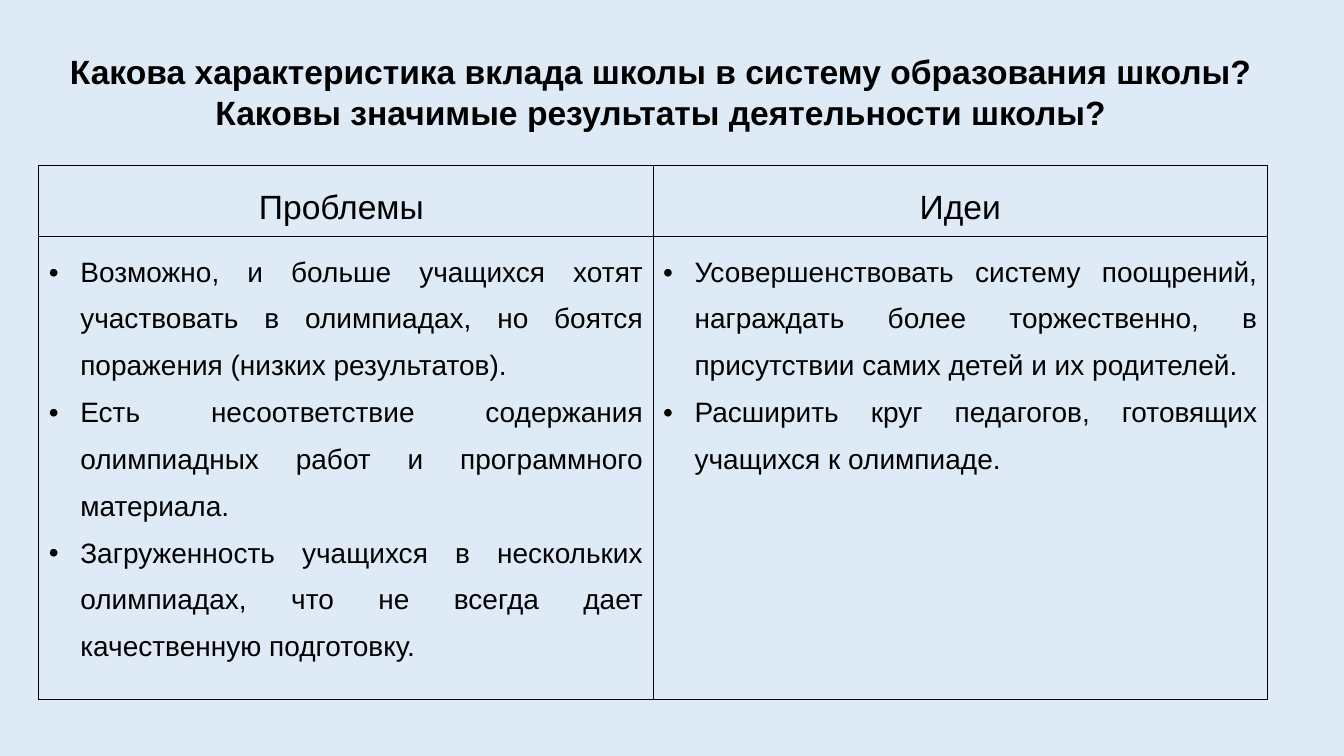
"""Build a slide with a title and a table of problems and ideas."""
import pptx
import pptx.util
import pptx.dml.color
import pptx.enum.text
import pptx.oxml
import pptx.oxml.ns

Cm = pptx.util.Cm
Pt = pptx.util.Pt
ALIGN = pptx.enum.text.PP_ALIGN

TITLE = ("Какова характеристика вклада школы в систему образования школы? "
         "Каковы значимые результаты деятельности школы?")
COLS = [
    ("Проблемы ", [
        "Возможно, и больше учащихся хотят участвовать в олимпиадах, но боятся "
        "поражения (низких результатов).",
        "Есть несоответствие содержания олимпиадных работ и программного материала.",
        "Загруженность учащихся в нескольких олимпиадах, что не всегда дает "
        "качественную подготовку.",
    ]),
    ("Идеи", [
        "Усовершенствовать систему поощрений, награждать более торжественно, "
        "в присутствии самих детей и их родителей.",
        "Расширить круг педагогов, готовящих учащихся к олимпиаде.",
    ]),
]
COLORS = {"back": "DEEBF7", "ink": "000000"}
FONT = "Arial"
LEFT, WIDTH = 0.98, 30.96
HEIGHTS = [1.78, 11.68]
INDENT = 0.79


def color(name):
    return pptx.dml.color.RGBColor.from_string(COLORS[name])


def node(tag, inner="", **attrs):
    pairs = "".join(f' {key}="{val}"' for key, val in attrs.items())
    space = pptx.oxml.ns.nsdecls("a")
    return pptx.oxml.parse_xml(f"<a:{tag} {space}{pairs}>{inner}</a:{tag}>")


def write(frame, lines, size=24, bold=False, align=ALIGN.CENTER, space=None, bullet=False):
    frame.word_wrap = True
    for i, line in enumerate(lines):
        para = frame.add_paragraph() if i else frame.paragraphs[0]
        para.alignment = align
        if space:
            para.line_spacing = space
        if bullet:
            props = para._p.get_or_add_pPr()
            props.set("marL", str(Cm(INDENT)))
            props.set("indent", str(-Cm(INDENT)))
            props.append(node("buFont", typeface=FONT))
            props.append(node("buChar", char="•"))
        run = para.add_run()
        run.text = line
        run.font.name = FONT
        run.font.size = Pt(size)
        run.font.bold = bold
        run.font.color.rgb = color("ink")


def border(cell):
    props = cell._tc.get_or_add_tcPr()
    fill = f'<a:solidFill><a:srgbClr val="{COLORS["ink"]}"/></a:solidFill>'
    for i, side in enumerate(("lnL", "lnR", "lnT", "lnB")):
        props.insert(i, node(side, fill, w=Pt(1)))


def main():
    deck = pptx.Presentation()
    deck.slide_width, deck.slide_height = Cm(33.87), Cm(19.05)
    slide = deck.slides.add_slide(deck.slide_layouts[6])
    slide.background.fill.solid()
    slide.background.fill.fore_color.rgb = color("back")

    title = slide.shapes.add_textbox(Cm(LEFT), Cm(1.17), Cm(31.34), Cm(2.31))
    write(title.text_frame, [TITLE], bold=True)

    table = slide.shapes.add_table(
        len(HEIGHTS), len(COLS), Cm(LEFT), Cm(4.17), Cm(WIDTH), Cm(sum(HEIGHTS))).table
    table.first_row = table.horz_banding = False
    for row, height in zip(table.rows, HEIGHTS):
        row.height = Cm(height)
    for i, (head, items) in enumerate(COLS):
        table.columns[i].width = Cm(WIDTH / len(COLS))
        top, body = table.cell(0, i), table.cell(1, i)
        write(top.text_frame, [head], space=1.5)
        write(body.text_frame, items, size=20, align=ALIGN.JUSTIFY, space=1.5, bullet=True)
        for cell in (top, body):
            cell.fill.background()
            border(cell)
    deck.save("out.pptx")


if __name__ == "__main__":
    main()
